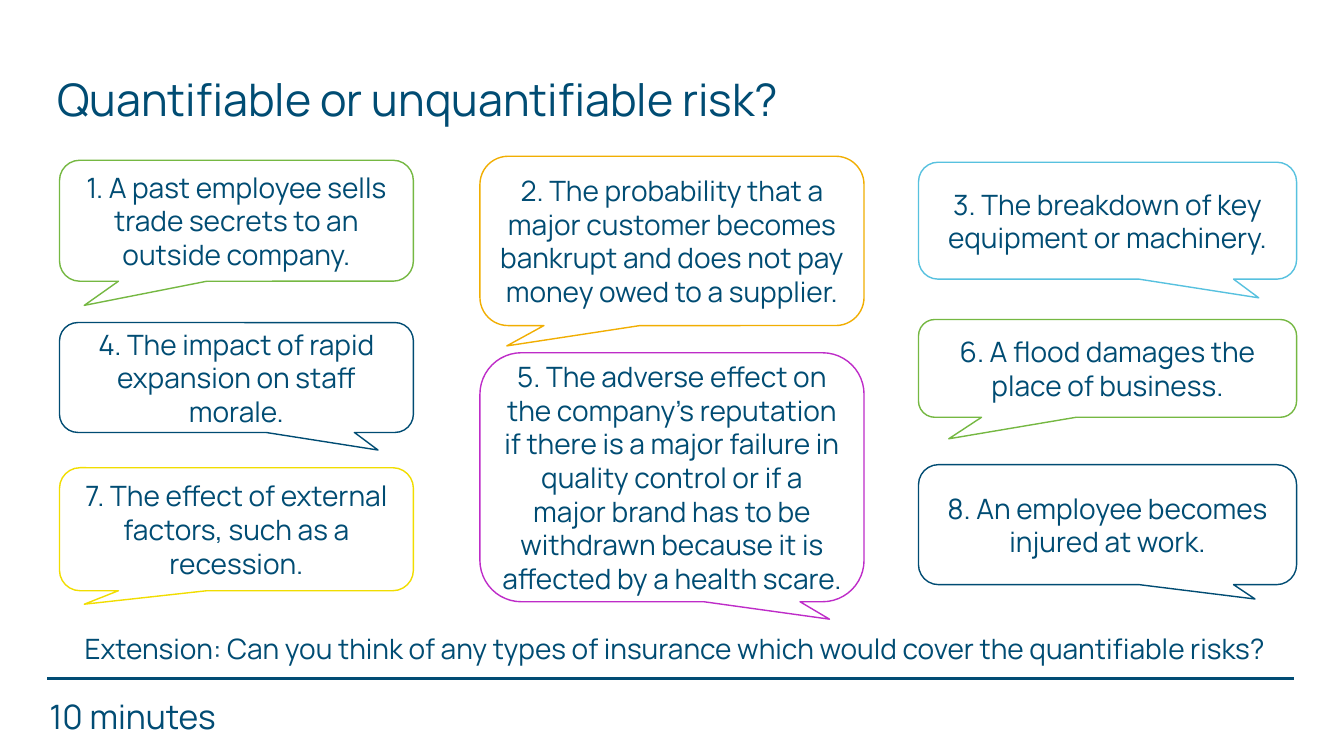
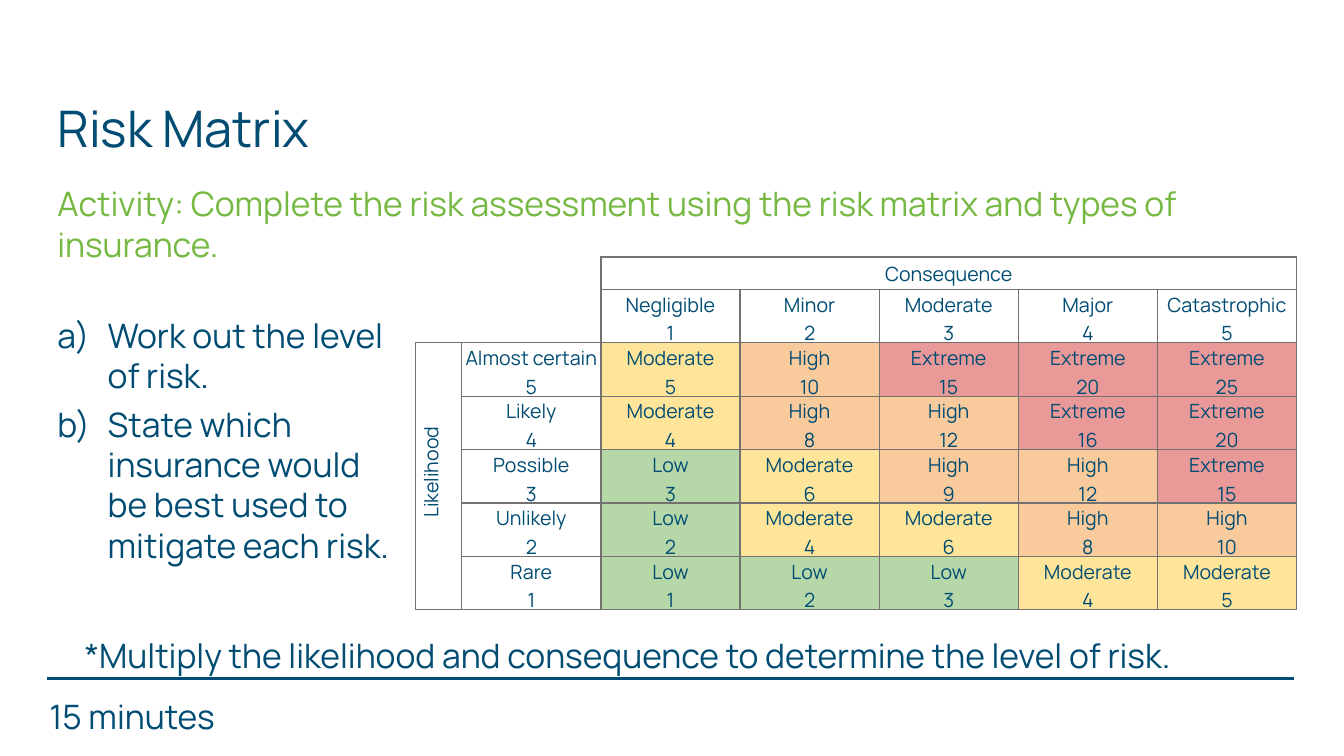
from dataclasses import dataclass
from typing import Optional

import lxml.etree
import pptx
import pptx.dml.color
import pptx.enum.shapes
import pptx.enum.text
import pptx.oxml.ns
import pptx.slide
import pptx.table
import pptx.text.text
import pptx.util

PX = 9144  # 100 px to the inch
FONT = "Manrope"
NAVY = "004C73"
FOOTER_BLUE = "014C74"
GREEN = "75B842"
AMBER = "F1AE02"
SKY = "57C1DF"
PURPLE = "BE2CC8"
YELLOW = "F1DD00"
WHITE = "FFFFFF"
GRID_GREY = "767171"

ALIGN = pptx.enum.text.PP_ALIGN
ANCHOR = pptx.enum.text.MSO_ANCHOR


@dataclass(frozen=True)
class Box:
    left: int
    top: int
    width: int
    height: int

    def emu(self) -> tuple[int, int, int, int]:
        return (px(self.left), px(self.top), px(self.width), px(self.height))


@dataclass(frozen=True)
class Column:
    left: int
    width: int


@dataclass(frozen=True)
class Callout:
    column: Column
    top: int
    height: int
    tail_x: float
    tail_y: float
    line: str
    text: str


@dataclass(frozen=True)
class Level:
    name: str
    highest_score: int
    fill: str


LEFT, MIDDLE, RIGHT = Column(59, 351), Column(476, 381), Column(911, 375)

CALLOUTS = [
    Callout(LEFT, 159, 120, -0.43, 0.7, GREEN,
            "1. A past employee sells trade secrets to an outside company."),
    Callout(MIDDLE, 155, 168, -0.43, 0.62, AMBER,
            "2. The probability that a major customer becomes bankrupt "
            "and does not pay money owed to a supplier."),
    Callout(RIGHT, 161, 116, 0.4, 0.66, SKY,
            "3. The breakdown of key equipment or machinery."),
    Callout(LEFT, 320, 109, 0.4, 0.66, NAVY,
            "4. The impact of rapid expansion on staff morale."),
    Callout(MIDDLE, 350, 247, 0.41, 0.57, PURPLE,
            "5. The adverse effect on the company’s reputation if there is "
            "a major failure in quality control or if a major brand has to be "
            "withdrawn because it is affected by a health scare."),
    Callout(RIGHT, 317, 97, -0.42, 0.72, GREEN,
            "6. A flood damages the place of business."),
    Callout(LEFT, 464, 122, -0.43, 0.61, YELLOW,
            "7. The effect of external factors, such as a recession."),
    Callout(RIGHT, 461, 119, 0.39, 0.62, NAVY,
            "8. An employee becomes injured at work."),
]

LEVELS = [
    Level("Low", 3, "B6D7A8"),
    Level("Moderate", 6, "FFE599"),
    Level("High", 12, "F9CB9C"),
    Level("Extreme", 25, "EA9999"),
]
CONSEQUENCES = ["Negligible", "Minor", "Moderate", "Major", "Catastrophic"]
LIKELIHOODS = ["Rare", "Unlikely", "Possible", "Likely", "Almost certain"]
CORNER_EDGES = {(0, 0): "", (0, 1): "R", (1, 0): "B", (1, 1): "RB"}


def px(length: int) -> int:
    return pptx.util.Emu(length * PX)


def color(value: str) -> pptx.dml.color.RGBColor:
    return pptx.dml.color.RGBColor.from_string(value)


def add_element(parent: lxml.etree.ElementBase, tag: str,
                **attributes: str) -> lxml.etree.ElementBase:
    return lxml.etree.SubElement(parent, pptx.oxml.ns.qn(tag), attributes)


def style_para(para: pptx.text.text._Paragraph, size: int, ink: str = NAVY,
               align: ALIGN = ALIGN.LEFT, spacing: Optional[float] = None,
               after: int = 0) -> None:
    para.alignment = align
    para.space_after = pptx.util.Pt(after)
    if spacing:
        para.line_spacing = spacing
    para.font.name = FONT
    para.font.size = pptx.util.Pt(size)
    para.font.color.rgb = color(ink)


def add_text(page: pptx.slide.Slide, box: Box, lines: list[str], size: int,
             ink: str = NAVY, spacing: Optional[float] = None, after: int = 0,
             lettered: bool = False) -> None:
    frame = page.shapes.add_textbox(*box.emu()).text_frame
    frame.word_wrap = True
    for index, line in enumerate(lines):
        para = frame.add_paragraph() if index else frame.paragraphs[0]
        para.text = line
        if lettered:
            properties = para._p.get_or_add_pPr()
            properties.set("marL", str(px(50)))
            properties.set("indent", str(px(-50)))
            add_element(properties, "a:buFont", typeface="+mj-lt")
            add_element(properties, "a:buAutoNum", type="alphaLcParenR")
        style_para(para, size, ink, spacing=spacing, after=after)


def add_page(deck: pptx.presentation.Presentation, title: str, title_box: Box,
             title_size: int, duration: str) -> pptx.slide.Slide:
    """Add a slide with its title, footer rule and activity time."""
    page = deck.slides.add_slide(deck.slide_layouts[5])
    heading = page.shapes.title
    heading.left, heading.top, heading.width, heading.height = title_box.emu()
    frame = heading.text_frame
    frame.auto_size = pptx.enum.text.MSO_AUTO_SIZE.NONE
    frame.vertical_anchor = ANCHOR.MIDDLE
    frame.text = title
    style_para(frame.paragraphs[0], title_size, spacing=0.9)

    rule = page.shapes.add_connector(
        pptx.enum.shapes.MSO_CONNECTOR.STRAIGHT,
        px(47), px(673), px(1283), px(673))
    rule.line.color.rgb = color(FOOTER_BLUE)
    rule.line.width = pptx.util.Pt(2.25)
    add_element(rule._element.spPr, "a:effectLst")
    add_text(page, Box(39, 685, 238, 50), [duration], 24, FOOTER_BLUE)
    return page


def add_callout(page: pptx.slide.Slide, callout: Callout) -> None:
    box = Box(callout.column.left, callout.top, callout.column.width, callout.height)
    bubble = page.shapes.add_shape(
        pptx.enum.shapes.MSO_SHAPE.ROUNDED_RECTANGULAR_CALLOUT, *box.emu())
    bubble.adjustments[0] = callout.tail_x
    bubble.adjustments[1] = callout.tail_y
    bubble.shadow.inherit = False
    bubble.fill.solid()
    bubble.fill.fore_color.rgb = color(WHITE)
    bubble.line.color.rgb = color(callout.line)
    bubble.line.width = pptx.util.Pt(1)
    frame = bubble.text_frame
    frame.word_wrap = True
    frame.vertical_anchor = ANCHOR.MIDDLE
    frame.text = callout.text
    style_para(frame.paragraphs[0], 20, align=ALIGN.CENTER)


def set_borders(cell: pptx.table._Cell, edges: str) -> None:
    """Draw the given edges (any of L, R, T, B) and blank the others."""
    properties = cell._tc.get_or_add_tcPr()
    for edge in "LRTB":
        line = add_element(properties, f"a:ln{edge}", w=str(pptx.util.Pt(1)))
        if edge in edges:
            fill = add_element(line, "a:solidFill")
            add_element(fill, "a:srgbClr", val=GRID_GREY)
        else:
            add_element(line, "a:noFill")


def format_cell(cell: pptx.table._Cell, text: str, edges: str,
                fill: Optional[str] = None) -> None:
    cell.margin_left = cell.margin_right = px(3)
    cell.margin_top = cell.margin_bottom = 0
    cell.vertical_anchor = ANCHOR.MIDDLE
    set_borders(cell, edges)
    if fill:
        cell.fill.solid()
        cell.fill.fore_color.rgb = color(fill)
    else:
        cell.fill.background()
    para = cell.text_frame.paragraphs[0]
    para.text = text
    style_para(para, 14, align=ALIGN.CENTER, spacing=1.07, after=8)


def matrix_entry(row: int, column: int) -> tuple[str, Optional[str]]:
    """Return the text and fill of one cell of the risk matrix."""
    likelihood, consequence = 7 - row, column - 1
    if row >= 2 and column >= 2:
        score = likelihood * consequence
        level = next(item for item in LEVELS if score <= item.highest_score)
        return f"{level.name}\n{score}", level.fill
    if row == 1 and column >= 2:
        return f"{CONSEQUENCES[consequence - 1]}\n{consequence}", None
    if row >= 2 and column == 1:
        return f"{LIKELIHOODS[likelihood - 1]}\n{likelihood}", None
    axis_names = {(0, 2): "Consequence", (2, 0): "Likelihood"}
    return axis_names.get((row, column), ""), None


def add_risk_matrix(page: pptx.slide.Slide) -> None:
    widths = [46] + [138] * 6
    heights = [32] + [53] * 6
    box = Box(412, 255, sum(widths), sum(heights))
    table = page.shapes.add_table(len(heights), len(widths), *box.emu()).table
    table.first_row = table.horz_banding = False
    for column, width in zip(table.columns, widths):
        column.width = px(width)
    for row, height in zip(table.rows, heights):
        row.height = px(height)
    for row in range(len(heights)):
        for column in range(len(widths)):
            text, fill = matrix_entry(row, column)
            edges = CORNER_EDGES.get((row, column), "LRTB")
            format_cell(table.cell(row, column), text, edges, fill)
    table.cell(0, 2).merge(table.cell(0, 6))
    likelihood = table.cell(2, 0)
    likelihood.merge(table.cell(6, 0))
    likelihood._tc.get_or_add_tcPr().set("vert", "vert270")
    likelihood.text_frame.paragraphs[0]._p.get_or_add_pPr().set("marL", str(px(8)))


def build_risk_types(deck: pptx.presentation.Presentation) -> None:
    page = add_page(deck, "Quantifiable or unquantifiable risk?",
                    Box(47, 55, 798, 92), 32, "10 minutes")
    for callout in CALLOUTS:
        add_callout(page, callout)
    add_text(page, Box(74, 605, 1212, 55),
             ["Extension: Can you think of any types of insurance which would "
              "cover the quantifiable risks?"], 20, spacing=1.5)


def build_risk_matrix(deck: pptx.presentation.Presentation) -> None:
    page = add_page(deck, "Risk Matrix", Box(47, 53, 1251, 155), 36, "15 minutes")
    add_risk_matrix(page)
    add_text(page, Box(47, 307, 353, 261),
             ["Work out the level of risk.",
              "State which insurance would be best used to mitigate each risk."],
             24, after=6, lettered=True)
    add_text(page, Box(74, 605, 1212, 64),
             ["*Multiply the likelihood and consequence to determine the level "
              "of risk."], 24, spacing=1.5)
    add_text(page, Box(47, 177, 1240, 91),
             ["Activity: Complete the risk assessment using the risk matrix and "
              "types of insurance."], 24, GREEN, after=6)


def main() -> None:
    deck = pptx.Presentation()
    deck.slide_width, deck.slide_height = px(1333), px(750)
    build_risk_types(deck)
    build_risk_matrix(deck)
    deck.save("out.pptx")


if __name__ == "__main__":
    main()
